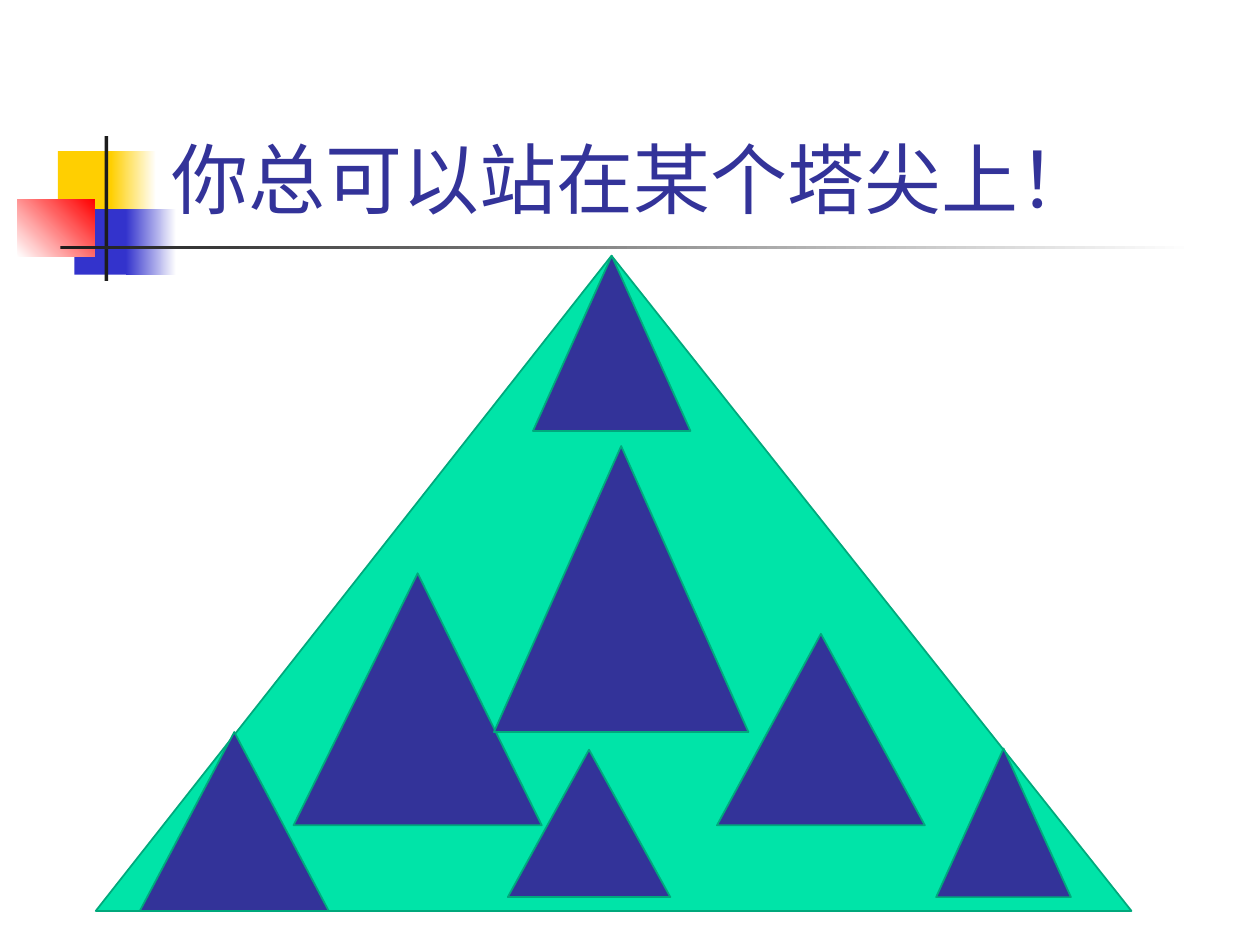
import pptx
import pptx.dml.color
import pptx.enum.shapes
import pptx.enum.text
import pptx.oxml.ns
import pptx.util
from lxml import etree

# Content: boxes are left, top, width, height in cells of a 10-column square grid
TITLE = "你总可以站在某个塔尖上！"
TITLE_BOX = (1.26, 0.23, 8.52, 1.6)

# Box, colours (one is solid, two are a gradient), gradient angle
ORNAMENTS = [
    ((0.46, 1.2, 0.48, 0.52), ("yellow",), 0),
    ((0.88, 1.2, 0.36, 0.52), ("yellow", "white"), 0),
    ((0.59, 1.66, 0.46, 0.52), ("blue",), 0),
    ((1, 1.66, 0.4, 0.52), ("blue", "white"), 0),
    ((0.14, 1.58, 0.61, 0.46), ("white", "red"), 45),
    ((0.83, 1.08, 0.03, 1.15), ("black",), 0),
    ((0.48, 1.95, 9, 0.03), ("black", "white"), 0),
]
MOUNTAIN = (0.76, 2.03, 8.22, 5.2)
MOUNTAIN_APEX = 0.498  # share of the width
PEAKS = [
    (1.11, 5.81, 1.5, 1.42),
    (2.33, 4.55, 1.97, 2),
    (4.03, 5.95, 1.29, 1.17),
    (5.69, 5.03, 1.65, 1.52),
    (3.92, 3.54, 2.02, 2.27),
    (4.23, 2.03, 1.25, 1.39),
    (7.43, 5.94, 1.07, 1.18),
]

THEME = {
    "font": "Noto Sans CJK SC", "title_size": 44, "outline_width": 1,
    "yellow": "FFCF01", "blue": "3333CC", "red": "FF0000",
    "black": "1C1C1C", "white": "FFFFFF",
    "navy": "333399", "mint": "00E4A8", "green": "00A97C",
}
COLUMNS = 10

deck = pptx.Presentation()
deck.slide_width = pptx.util.Inches(10)
deck.slide_height = pptx.util.Inches(7.5)
page = deck.slides.add_slide(deck.slide_layouts[5])
CELL = deck.slide_width / COLUMNS


def color(name):
    return pptx.dml.color.RGBColor.from_string(THEME[name])


def place(box):
    return [round(cells * CELL) for cells in box]


def apply(target, values):
    for name, value in values.items():
        setattr(target, name, value)


def add_figure(kind, box, colors, angle=0, outline=None):
    figure = page.shapes.add_shape(kind, *place(box))
    figure.shadow.inherit = False
    if len(colors) == 1:
        figure.fill.solid()
        figure.fill.fore_color.rgb = color(colors[0])
    else:
        figure.fill.gradient()
        figure.fill.gradient_angle = angle
        for stop, name in zip(figure.fill.gradient_stops, colors):
            stop.color.rgb = color(name)
    if outline:
        figure.line.color.rgb = color(outline)
        figure.line.width = pptx.util.Pt(THEME["outline_width"])
    else:
        figure.line.fill.background()
    return figure


# Corner ornament and rule, behind the title
SHAPES = pptx.enum.shapes.MSO_SHAPE
for box, colors, angle in ORNAMENTS:
    add_figure(SHAPES.RECTANGLE, box, colors, angle)

# Title, brought in front of the ornament
title = page.shapes.title
page.shapes._spTree.append(title._element)
apply(title, dict(zip(("left", "top", "width", "height"), place(TITLE_BOX))))
apply(title.text_frame, {
    "text": TITLE,
    "word_wrap": True,
    "auto_size": pptx.enum.text.MSO_AUTO_SIZE.NONE,
    "vertical_anchor": pptx.enum.text.MSO_ANCHOR.BOTTOM,
})
para = title.text_frame.paragraphs[0]
para.alignment = pptx.enum.text.PP_ALIGN.LEFT
span = para.runs[0]
apply(span.font, {"name": THEME["font"], "size": pptx.util.Pt(THEME["title_size"])})
span.font.color.rgb = color("navy")
east_asian = etree.SubElement(span.font._element, pptx.oxml.ns.qn("a:ea"))
east_asian.set("typeface", THEME["font"])

# Mountain and the peaks on it
mountain = add_figure(SHAPES.ISOSCELES_TRIANGLE, MOUNTAIN, ("mint",), outline="green")
mountain.adjustments[0] = MOUNTAIN_APEX
for box in PEAKS:
    add_figure(SHAPES.ISOSCELES_TRIANGLE, box, ("navy",), outline="green")

deck.save("out.pptx")
